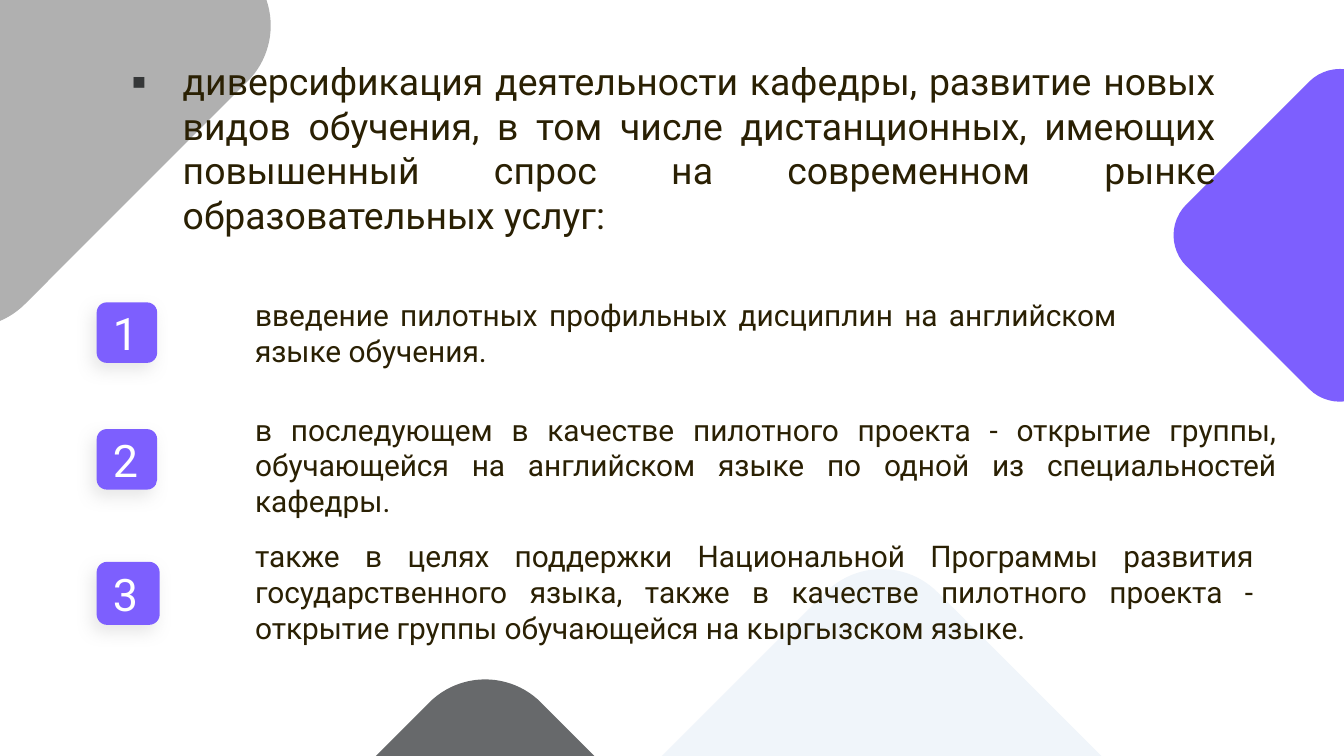
from lxml import etree
from pptx import Presentation
from pptx.dml.color import RGBColor
from pptx.enum.shapes import MSO_SHAPE
from pptx.enum.text import MSO_ANCHOR, MSO_AUTO_SIZE, PP_ALIGN
from pptx.oxml import parse_xml
from pptx.oxml.ns import nsdecls, qn
from pptx.util import Pt

ROUNDED = MSO_SHAPE.ROUNDED_RECTANGLE
TOP, MIDDLE, BOTTOM = MSO_ANCHOR.TOP, MSO_ANCHOR.MIDDLE, MSO_ANCHOR.BOTTOM
LEFT, JUSTIFY = PP_ALIGN.LEFT, PP_ALIGN.JUSTIFY
NO_FIT = MSO_AUTO_SIZE.NONE
TITLE_ONLY = 5

VIOLET, SILVER, GRAPHITE, MIST = "7D5FFE", "B0B0B0", "67696B", "F0F5FA"
INK, BULLET, WHITE = "2A2003", "353738", "FFFFFF"


def rgb(color):
    return RGBColor.from_string(color)


class SlideBuilder:
    font = "Roboto"
    inset = 7.2
    corner = 0.167

    def __init__(self, s):
        self.s = s

    def set_text(self, sp, text, size, color, align, anchor):
        tf = sp.text_frame
        tf.word_wrap = True
        tf.auto_size = NO_FIT
        tf.vertical_anchor = anchor
        tf.margin_left = tf.margin_right = Pt(self.inset)
        tf.margin_top = tf.margin_bottom = Pt(self.inset)
        p = tf.paragraphs[0]
        p.text = text
        p.alignment = align
        p.font.name = self.font
        p.font.size = Pt(size)
        p.font.color.rgb = rgb(color)
        return p

    def indent(self, p, left, first=0):
        p.space_before = Pt(3.6)
        pPr = p._p.get_or_add_pPr()
        pPr.set("marL", str(Pt(left)))
        pPr.set("indent", str(Pt(first)))
        return pPr

    def square(self, left, top, side, color, rotation=0):
        sp = self.s.shapes.add_shape(ROUNDED, Pt(left), Pt(top), Pt(side), Pt(side))
        sp.adjustments[0] = self.corner
        sp.rotation = rotation
        sp.fill.solid()
        sp.fill.fore_color.rgb = rgb(color)
        sp.line.fill.background()
        sp.shadow.inherit = False
        return sp

    def title(self, text, left, top, width, height):
        sp = self.s.shapes.title
        sp.left, sp.top, sp.width, sp.height = Pt(left), Pt(top), Pt(width), Pt(height)
        p = self.set_text(sp, text, 20, INK, JUSTIFY, TOP)
        pPr = self.indent(p, 38.9, -27.4)
        # Square bullet, placed ahead of the default run properties
        bullet = [
            f'<a:buClr {nsdecls("a")}><a:srgbClr val="{BULLET}"/></a:buClr>',
            f'<a:buFont {nsdecls("a")} typeface="{self.font}"/>',
            f'<a:buChar {nsdecls("a")} char="▪"/>',
        ]
        defaults = pPr.find(qn("a:defRPr"))
        for xml in bullet:
            defaults.addprevious(parse_xml(xml))

    def item(self, text, left, top, width, height):
        sp = self.s.shapes.add_textbox(Pt(left), Pt(top), Pt(width), Pt(height))
        p = self.set_text(sp, text, 16, INK, JUSTIFY, BOTTOM)
        self.indent(p, 11.5)

    def badge(self, number, left, top, side):
        sp = self.square(left, top, side, VIOLET)
        self.set_text(sp, str(number), 24, WHITE, LEFT, MIDDLE)
        effects = sp._element.spPr.find(qn("a:effectLst"))
        shadow = etree.SubElement(
            effects, qn("a:outerShdw"), blurRad=str(Pt(9)), dist=str(Pt(4.5)),
            dir=str(121 * 60000), algn="bl", rotWithShape="0")
        color = etree.SubElement(shadow, qn("a:srgbClr"), val=SILVER)
        etree.SubElement(color, qn("a:alpha"), val="30000")


def main():
    prs = Presentation()
    prs.slide_width, prs.slide_height = Pt(720), Pt(405)
    b = SlideBuilder(prs.slides.add_slide(prs.slide_layouts[TITLE_ONLY]))

    # Background diamonds: left, top, side, colour
    diamonds = [
        (345.6, 339.8, 253.4, MIST),
        (-143.3, -113, 253.4, SILVER),
        (133.2, 398.9, 253.4, GRAPHITE),
        (648, 56.2, 139.7, VIOLET),
    ]
    for diamond in diamonds:
        b.square(*diamond, rotation=315)

    # Heading, brought in front of the diamonds
    b.title("диверсификация деятельности кафедры, развитие новых видов обучения, "
            "в том числе дистанционных, имеющих повышенный спрос на современном "
            "рынке образовательных услуг:", 51.8, 23.8, 607, 105.1)
    heading = b.s.shapes.title._element
    heading.getparent().append(heading)

    # Numbered items: text, top, width, height, badge top, badge side
    items = [
        ("введение пилотных профильных дисциплин на английском языке обучения.",
         162.7, 487.4, 41.8, 162, 32.4),
        ("в последующем в качестве пилотного проекта - открытие группы, обучающейся "
         "на английском языке по одной из специальностей кафедры.",
         216.7, 573.1, 68.4, 229.9, 32.4),
        ("также в целях поддержки Национальной Программы развития государственного "
         "языка, также в качестве пилотного проекта - открытие группы обучающейся "
         "на кыргызском языке.",
         283, 560.9, 69.8, 301, 33.8),
    ]
    for number, (text, top, width, height, badge_top, side) in enumerate(items, 1):
        b.item(text, 118.1, top, width, height)
        b.badge(number, 51.8, badge_top, side)

    prs.save("out.pptx")


if __name__ == "__main__":
    main()
